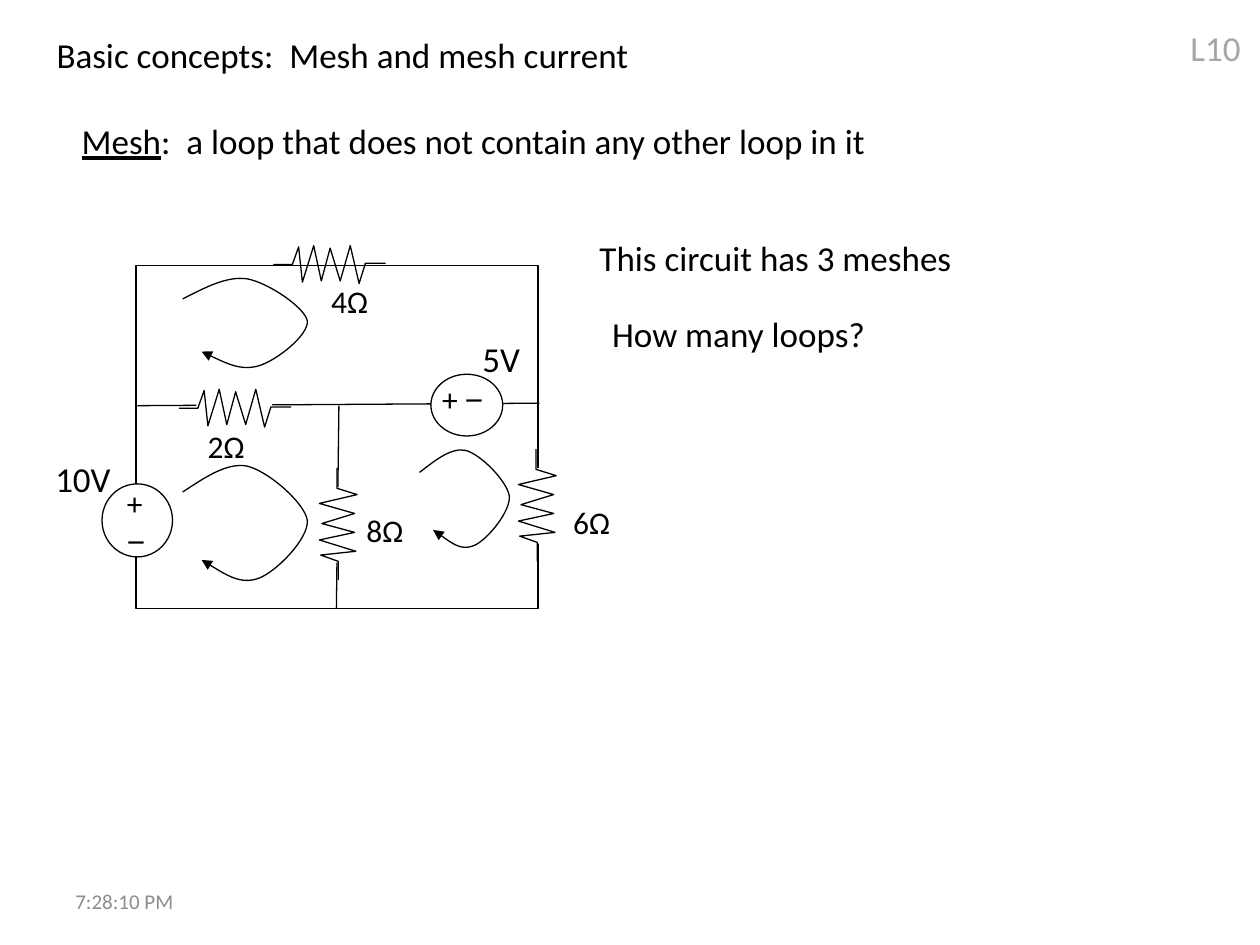
import pptx
import pptx.util
import pptx.dml.color
import pptx.enum.shapes
import pptx.enum.text
import pptx.oxml
import pptx.oxml.ns

Inches = pptx.util.Inches
Kind = pptx.enum.shapes.MSO_SHAPE
ZIGZAG = [(0, .15), (.15, .15), (.2, .01), (.23, .29), (.32, 0), (.38, .28),
          (.45, .02), (.53, .28), (.61, 0), (.68, .3), (.73, .14), (.89, .14)]
SWIRL = [(0, .24), (.18, .12), (.35, 0), (.51, .03), (.68, .07), (.97, .33), (.99, .47),
         (1, .62), (.74, .89), (.6, .94), (.46, .99), (.31, .89), (.15, .79)]


def color(code):
    """Turn a hex string into a colour."""
    return pptx.dml.color.RGBColor.from_string(code)


def tag(name):
    """Make an empty drawing element."""
    return pptx.oxml.parse_xml(f"<a:{name} {pptx.oxml.ns.nsdecls('a')}/>")


def ink(line):
    """Draw a line thin and black."""
    line.color.rgb = color("000000")
    line.width = pptx.util.Pt(0.75)


def label(shapes, box, lines, size=20, tint="000000", wrap=False):
    """Write paragraphs, each a list of (text, font, underline) runs."""
    frame = shapes.add_textbox(*map(Inches, box)).text_frame
    frame.word_wrap = wrap
    if wrap:
        frame.vertical_anchor = pptx.enum.text.MSO_ANCHOR.MIDDLE
    for i, runs in enumerate(lines):
        para = frame.add_paragraph() if i else frame.paragraphs[0]
        para.font.size = pptx.util.Pt(size)
        para.font.color.rgb = color(tint)
        for text, face, under in runs:
            run = para.add_run()
            run.text = text
            run.font.size = pptx.util.Pt(size)
            run.font.name = face
            run.font.color.rgb = color(tint)
            if under:
                run.font.underline = True


def plain(text):
    """Give one paragraph of one Calibri run."""
    return [[(text, "Calibri", False)]]


def block(shapes, kind, box, fill=None, edge=True):
    """Place a preset shape with an optional fill and outline."""
    shape = shapes.add_shape(kind, *map(Inches, box))
    shape.shadow.inherit = False
    if fill:
        shape.fill.solid()
        shape.fill.fore_color.rgb = color(fill)
    else:
        shape.fill.background()
    if edge:
        ink(shape.line)
    else:
        shape.line.fill.background()
    return shape


def wire(shapes, start, end):
    """Join two points with a straight wire."""
    line = shapes.add_connector(pptx.enum.shapes.MSO_CONNECTOR.STRAIGHT,
                                *map(Inches, start + end))
    ink(line.line)
    line._element.spPr.append(tag("effectLst"))


def trace(shapes, points):
    """Draw an open outline through points."""
    spots = [(Inches(x), Inches(y)) for x, y in points]
    pen = shapes.build_freeform(*spots[0])
    pen.add_line_segments(spots[1:], close=False)
    shape = pen.convert_to_shape()
    shape.shadow.inherit = False
    shape.fill.background()
    ink(shape.line)
    return shape


def resist(shapes, x, y, turn=0, mask=True):
    """Draw a resistor, hiding the wire beneath it if masked."""
    if mask:
        block(shapes, Kind.RECTANGLE, (x + .14, y + .02, .6, .27), "FFFFFF", False).rotation = turn
    trace(shapes, [(x + u, y + v) for u, v in ZIGZAG]).rotation = turn


def swirl(shapes, x, y, w, h):
    """Draw a curved mesh current arrow inside a box."""
    shape = trace(shapes, [(x + u * w, y + v * h) for u, v in SWIRL])
    steps = list(shape._element.iter(pptx.oxml.ns.qn("a:lnTo")))
    for i in range(0, len(steps), 3):
        curve = tag("cubicBezTo")
        steps[i].addprevious(curve)
        for step in steps[i:i + 3]:
            curve.append(step[0])
            step.getparent().remove(step)
    head = tag("tailEnd")
    head.set("type", "triangle")
    shape.line._get_or_add_ln().append(head)


def source(shapes, box, sign, lines):
    """Draw a voltage source with its polarity signs."""
    block(shapes, Kind.OVAL, box, "FFFFFF")
    label(shapes, sign, lines, 18)


def circuit(shapes, x, y):
    """Draw the three-mesh circuit from its top left corner."""
    wire(shapes, (x + .01, y + 1.11), (x + 3.2, y + 1.09))
    block(shapes, Kind.RECTANGLE, (x, y, 3.19, 2.72))
    wire(shapes, (x + 1.61, y + 1.11), (x + 1.59, y + 2.72))
    resist(shapes, x + 1.09, y - .16, mask=False)
    for dx, dy, turn in [(1.16, 1.9, 270), (.34, .98, 0), (2.74, 1.75, 270)]:
        resist(shapes, x + dx, y + dy, turn)
    plus, minus = ("+", "Calibri", False), ("−", "Arial", False)
    source(shapes, (x - .27, y + 1.73, .56, .58), (x - .17, y + 1.68, .34, .71),
           [[plus], [minus]])
    source(shapes, (x + 2.34, y + .86, .57, .49), (x + 2.33, y + .86, .62, .47),
           [[("+ ", "Calibri", False), minus]])
    for text, dx, dy in [("4Ω", 1.45, .08), ("6Ω", 3.37, 1.83),
                         ("8Ω", 1.73, 1.9), ("2Ω", .47, 1.23)]:
        label(shapes, (x + dx, y + dy, .52, .4), plain(text), 18)
    label(shapes, (x + 2.65, y + .52, .55, .44), plain("5V"))
    label(shapes, (x - .74, y + 1.47, .69, .44), plain("10V"))
    for dx, dy, w, h in [(2.25, 1.44, .72, .83), (.37, .08, 1, .76), (.37, 1.56, 1, .98)]:
        swirl(shapes, x + dx, y + dy, w, h)


def notes(shapes, x, y):
    """Write the title, the definition and the remarks."""
    label(shapes, (x, y, 4.79, .44), plain("Basic concepts:  Mesh and mesh current"))
    label(shapes, (x + .2, y + .68, 6.47, .44),
          [[("Mesh", "Calibri", True),
            (":  a loop that does not contain any other loop in it", "Calibri", False)]])
    label(shapes, (x + 4.31, y + 1.61, 3.03, .44), plain("This circuit has 3 meshes"))
    label(shapes, (x + 4.41, y + 2.21, 2.24, .44), plain("How many loops?"))


def main():
    """Build and save the slide."""
    deck = pptx.Presentation()
    deck.slide_width, deck.slide_height = Inches(10), Inches(7.5)
    shapes = deck.slides.add_slide(deck.slide_layouts[6]).shapes
    label(shapes, (9.35, .16, .6, .44), plain("L10"), tint="A6A6A6")
    notes(shapes, .35, .22)
    circuit(shapes.add_group_shape().shapes, 1.08, 2.11)
    label(shapes, (.5, 6.95, 2.33, .4), plain("7:28:10 PM"), 12, "8C8C8C", True)
    deck.save("out.pptx")


if __name__ == "__main__":
    main()
